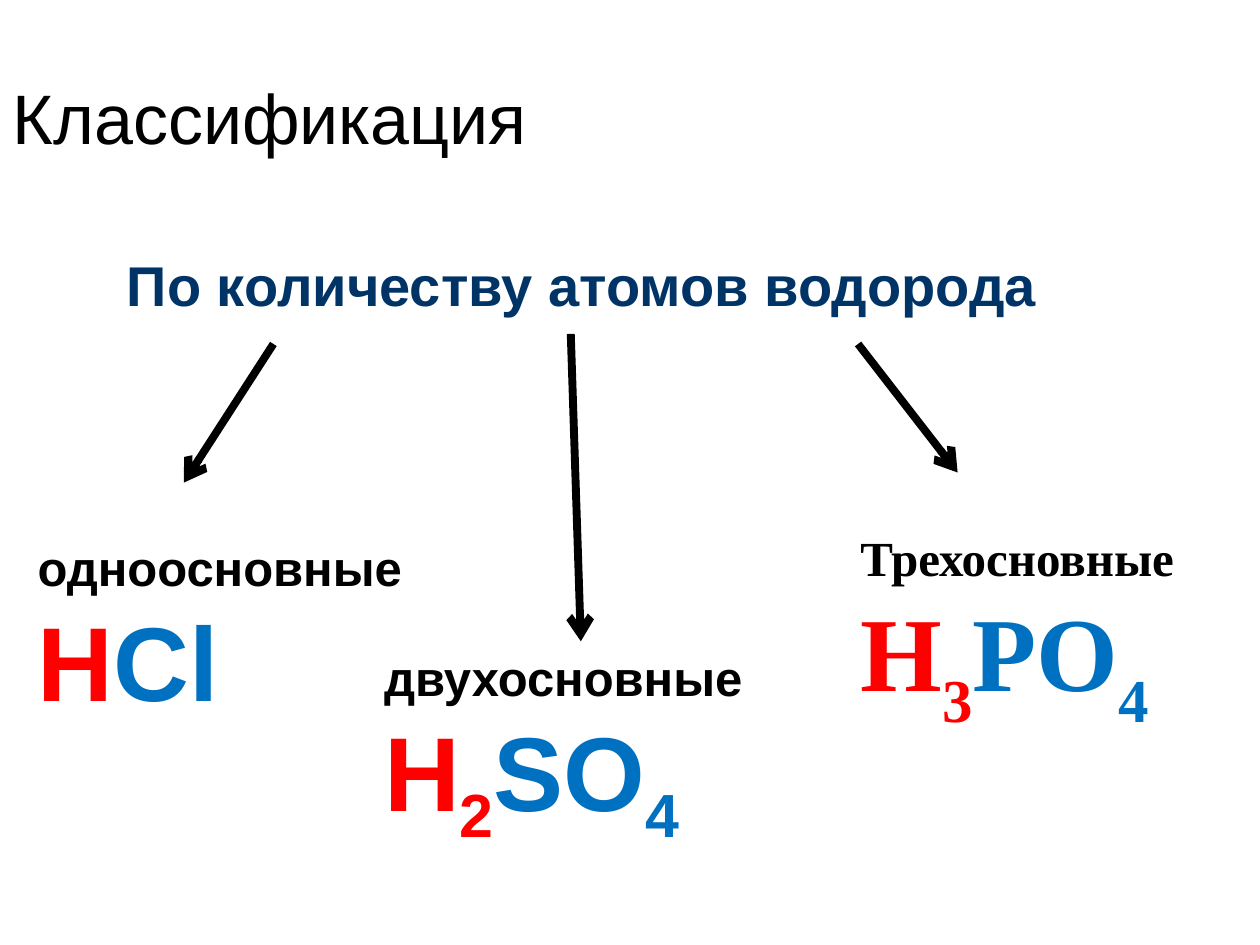
from pptx import Presentation
from pptx.dml.color import RGBColor
from pptx.enum import shapes, text
from pptx.oxml.ns import qn
from pptx.util import Inches, Pt
from lxml import etree

BLACK = RGBColor(0, 0, 0)
RED = RGBColor(0xFF, 0, 0)
BLUE = RGBColor(0, 0x70, 0xC0)
NAVY = RGBColor(0, 0x33, 0x66)
TOP, MID = text.MSO_ANCHOR.TOP, text.MSO_ANCHOR.MIDDLE

# Content
TITLE = "Классификация"
BASIS = "По количеству атомов водорода"
# name, formula parts (text, colour, is subscript), box, font, anchor, drop, one paragraph
ACIDS = [
    ("одноосновные", [("H", RED, False), ("Cl", BLUE, False)],
     (0.2, 4.22, 3.39, 1.58), "Arial", TOP, 0, True),
    ("двухосновные", [("H", RED, False), ("2", RED, True),
                      ("SO", BLUE, False), ("4", BLUE, True)],
     (2.95, 5.09, 3.39, 1.58), "Arial", TOP, -25000, False),
    ("Трехосновные", [("H", RED, False), ("3", RED, True),
                      ("PO", BLUE, False), ("4", BLUE, True)],
     (6.73, 4.22, 2.99, 1.58), "Times New Roman", MID, -30000, False),
]
ARROWS = [(2.17, 2.73, 1.46, 3.83), (4.53, 2.65, 4.61, 5.09), (6.81, 2.73, 7.6, 3.75)]


def style(font, size, color, name="Arial", bold=True):
    font.size, font.name, font.bold = Pt(size), name, bold
    font.color.rgb = color


def add_box(slide, box, anchor=TOP):
    frame = slide.shapes.add_textbox(*map(Inches, box)).text_frame
    frame.word_wrap = True
    frame.vertical_anchor = anchor
    return frame


def add_acid(slide, name, parts, box, face, anchor, drop, joined):
    frame = add_box(slide, box, anchor)
    para = frame.paragraphs[0]
    run = para.add_run()
    run.text = name
    style(run.font, 28, BLACK, face)
    if joined:
        para.add_line_break()
    else:
        para = frame.add_paragraph()
    for part, color, low in parts:
        run = para.add_run()
        run.text = part
        style(run.font, 60, color, face)
        if low:
            run._r.get_or_add_rPr().set("baseline", str(drop))


def add_arrow(slide, ends):
    arrow = slide.shapes.add_connector(
        shapes.MSO_CONNECTOR.STRAIGHT, *map(Inches, ends))
    arrow.line.color.rgb = BLACK
    arrow.line.width = Pt(4.5)
    etree.SubElement(arrow.line._get_or_add_ln(), qn("a:tailEnd"), type="arrow")
    etree.SubElement(arrow._element.spPr, qn("a:effectLst"))


def main():
    deck = Presentation()
    deck.slide_width, deck.slide_height = Inches(10), Inches(7.5)
    slide = deck.slides.add_slide(deck.slide_layouts[5])

    # Title
    title = slide.shapes.title
    title.left, title.top = Inches(0), Inches(0.3)
    title.width, title.height = Inches(9.5), Inches(1.25)
    title.text = TITLE
    title.text_frame.vertical_anchor = MID
    para = title.text_frame.paragraphs[0]
    para.alignment = text.PP_ALIGN.LEFT
    style(para.font, 40, BLACK, bold=False)

    # Acids
    for acid in ACIDS:
        add_acid(slide, *acid)

    # Basis of the classification
    para = add_box(slide, (0.91, 1.94, 7.64, 0.64)).paragraphs[0]
    para.text = BASIS
    style(para.font, 32, NAVY)

    # Arrows
    for ends in ARROWS:
        add_arrow(slide, ends)

    deck.save("out.pptx")


if __name__ == "__main__":
    main()
